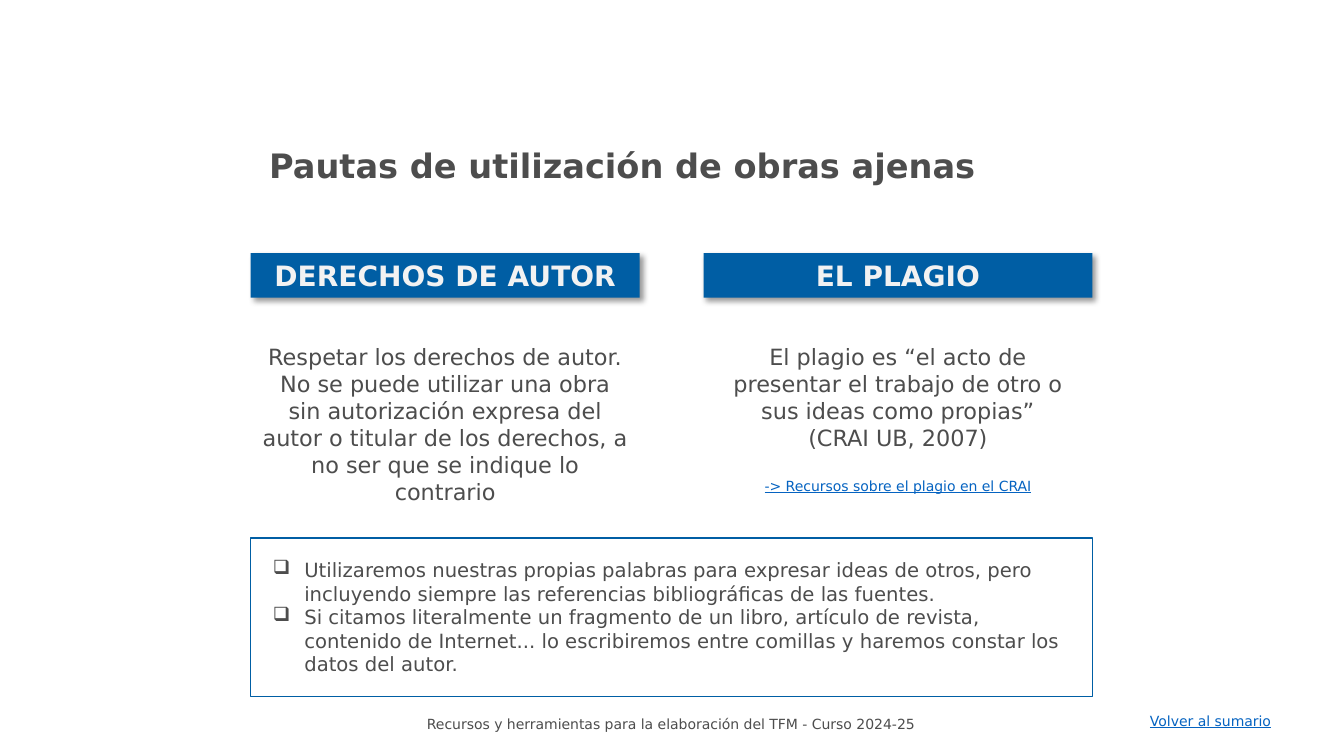
"""Builds the slide on guidelines for using the works of others."""
from lxml.etree import SubElement
from pptx import Presentation
from pptx.dml.color import RGBColor
from pptx.enum.shapes import MSO_SHAPE
from pptx.enum.text import MSO_ANCHOR, MSO_AUTO_SIZE, PP_ALIGN
from pptx.oxml.ns import qn
from pptx.util import Cm, Pt

FONT = "DejaVu Sans"
GREY, BLUE, LINK, PALE = "4D4D4D", "005EA4", "0563C1", "F2F2F2"
LEFT, RIGHT, COLUMN_WIDTH, FULL_WIDTH = 6.32, 17.73, 9.8, 21.21


def color(value):
    return RGBColor.from_string(value)


def write(shape, lines, size, ink=GREY, align=PP_ALIGN.LEFT, bold=False, bullet=None):
    frame = shape.text_frame
    frame.word_wrap = True
    frame.text = "\n".join(lines)
    for paragraph in frame.paragraphs:
        paragraph.alignment = align
        if bullet:
            properties = paragraph._p.get_or_add_pPr()
            properties.set("marL", str(Cm(0.79)))
            properties.set("indent", str(-Cm(0.79)))
            SubElement(properties, qn("a:buChar")).set("char", bullet)
        font = paragraph.font
        font.name, font.size, font.bold = FONT, Pt(size), bold
        font.color.rgb = color(ink)
    return frame


presentation = Presentation()
presentation.slide_width, presentation.slide_height = Cm(33.87), Cm(19.05)
slide = presentation.slides.add_slide(presentation.slide_layouts[5])
shapes = slide.shapes

title = shapes.title
title.left, title.top, title.width, title.height = Cm(6.53), Cm(3.53), Cm(FULL_WIDTH), Cm(1.27)
title_frame = write(title, ["Pautas de utilización de obras ajenas"], 24, bold=True)
title_frame.auto_size = MSO_AUTO_SIZE.NONE
title_frame.vertical_anchor = MSO_ANCHOR.TOP

columns = [
    (LEFT, "DERECHOS DE AUTOR", 4.37, [
        "Respetar los derechos de autor. No se puede utilizar una obra sin autorización "
        "expresa del autor o titular de los derechos, a no ser que se indique lo contrario",
    ]),
    (RIGHT, "EL PLAGIO", 4.78, [
        "El plagio es “el acto de presentar el trabajo de otro o sus ideas como propias”",
        "(CRAI UB, 2007)",
        "-> Recursos sobre el plagio en el CRAI",
    ]),
]
for left, heading, height, lines in columns:
    banner = shapes.add_shape(MSO_SHAPE.RECTANGLE, Cm(left), Cm(6.38), Cm(COLUMN_WIDTH), Cm(1.12))
    banner.fill.solid()
    banner.fill.fore_color.rgb = color(BLUE)
    banner.line.fill.background()
    banner.shadow.inherit = False
    effects = banner._element.spPr.find(qn("a:effectLst"))
    shadow = SubElement(effects, qn("a:outerShdw"), blurRad=str(Pt(4)), dist=str(Pt(3)),
                        dir="2700000", algn="tl", rotWithShape="0")
    shade = SubElement(shadow, qn("a:srgbClr"), val="000000")
    SubElement(shade, qn("a:alpha"), val="40000")
    write(banner, [heading], 20, PALE, PP_ALIGN.CENTER, bold=True)
    body = shapes.add_textbox(Cm(left), Cm(8.53), Cm(COLUMN_WIDTH), Cm(height))
    body_frame = write(body, lines, 16, align=PP_ALIGN.CENTER)

resources = body_frame.paragraphs[-1]
resources.space_before = Pt(19)
resources.font.size = Pt(10)
resources.font.underline = True
resources.font.color.rgb = color(LINK)

border = shapes.add_shape(MSO_SHAPE.RECTANGLE, Cm(LEFT), Cm(13.56), Cm(FULL_WIDTH), Cm(3.99))
border.fill.background()
border.line.color.rgb = color(BLUE)
border.line.width = Pt(1)
border.shadow.inherit = False

guidelines = shapes.add_textbox(Cm(6.63), Cm(13.94), Cm(20.6), Cm(3.25))
write(guidelines, [
    "Utilizaremos nuestras propias palabras para expresar ideas de otros, pero incluyendo "
    "siempre las referencias bibliográficas de las fuentes.",
    "Si citamos literalmente un fragmento de un libro, artículo de revista, contenido de "
    "Internet... lo escribiremos entre comillas y haremos constar los datos del autor.",
], 14, bullet="❑")

footer = shapes.add_textbox(Cm(6.81), Cm(17.91), Cm(20.19), Cm(0.69))
write(footer, ["Recursos y herramientas para la elaboración del TFM - Curso 2024-25"], 10,
      align=PP_ALIGN.CENTER)

summary = shapes.add_textbox(Cm(28.73), Cm(17.83), Cm(3.66), Cm(0.69))
summary_frame = write(summary, ["Volver al sumario"], 10, LINK)
summary_frame.word_wrap = False
summary_frame.paragraphs[0].font.underline = True

presentation.save("out.pptx")
